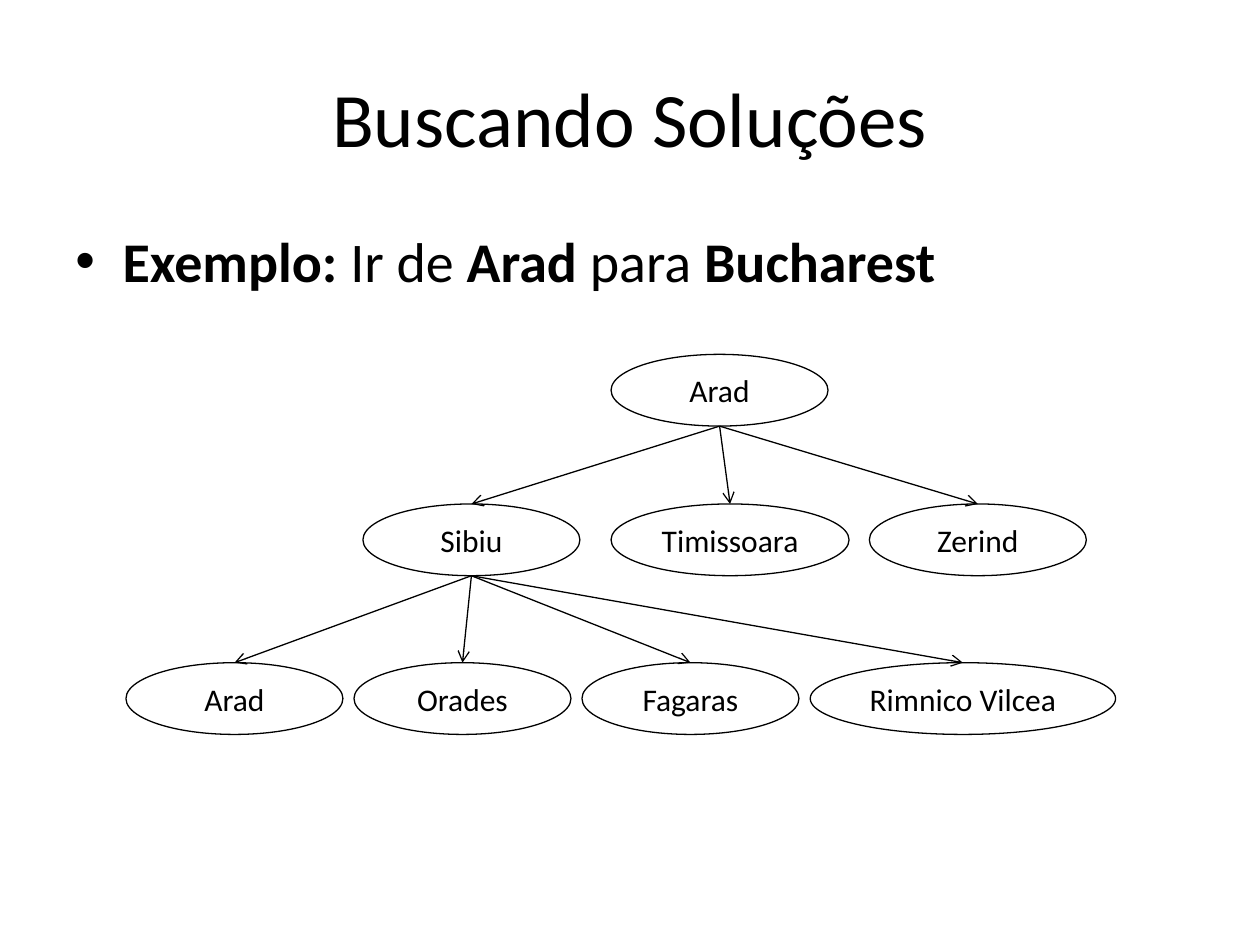
from lxml import etree
from pptx import Presentation
from pptx import util as u
from pptx.dml.color import RGBColor
from pptx.enum import shapes, text
from pptx.oxml.ns import qn

TITLE = "Buscando Soluções"
EXAMPLE = [("Exemplo: ", True), ("Ir de ", False), ("Arad", True),
           (" para ", False), ("Bucharest", True)]
LEVELS = [
    {"top": 202.5, "parent": None, "cities": [("Arad", 349.2, 124)]},
    {"top": 288, "parent": "Sibiu root", "cities": [
        ("Sibiu", 207.4, 124), ("Timissoara", 349.2, 136), ("Zerind", 496.8, 124)]},
    {"top": 378.7, "parent": "Sibiu", "cities": [
        ("Arad", 72, 124), ("Orades", 202.3, 124),
        ("Fagaras", 332.6, 124), ("Rimnico Vilcea", 463, 174.5)]},
]
LEVELS[1]["parent"] = "Arad"
NODE_HEIGHT = 41
THEME = {"font": "Calibri", "ink": RGBColor(0, 0, 0), "line": 0.75,
         "title": 44, "body": 32, "node": 18}


def write(shape, runs, size, align, anchor=text.MSO_ANCHOR.MIDDLE, wrap=True, bullet=None):
    frame = shape.text_frame
    frame.word_wrap = wrap
    frame.auto_size = text.MSO_AUTO_SIZE.NONE
    frame.vertical_anchor = anchor
    paragraph = frame.paragraphs[0]
    paragraph.alignment = align
    if bullet:
        properties = paragraph._p.get_or_add_pPr()
        properties.set("marL", str(u.Pt(27)))
        properties.set("indent", str(-u.Pt(27)))
        etree.SubElement(properties, qn("a:buFont")).set("typeface", "Arial")
        etree.SubElement(properties, qn("a:buChar")).set("char", bullet)
    for words, bold in runs:
        run = paragraph.add_run()
        run.text = words
        run.font.name = THEME["font"]
        run.font.size = u.Pt(size)
        run.font.bold = bold
        run.font.color.rgb = THEME["ink"]


def add_node(slide, city, left, top, width):
    node = slide.shapes.add_shape(shapes.MSO_SHAPE.OVAL, u.Pt(left), u.Pt(top),
                                  u.Pt(width), u.Pt(NODE_HEIGHT))
    node.shadow.inherit = False
    node.fill.background()
    node.line.color.rgb = THEME["ink"]
    node.line.width = u.Pt(THEME["line"])
    write(node, [(city, False)], THEME["node"], text.PP_ALIGN.CENTER, wrap=False)
    return node


def add_arrow(slide, parent, child):
    arrow = slide.shapes.add_connector(
        shapes.MSO_CONNECTOR.STRAIGHT,
        parent.left + parent.width // 2, parent.top + parent.height,
        child.left + child.width // 2, child.top)
    arrow.end_connect(child, 0)
    arrow.line.color.rgb = THEME["ink"]
    arrow.line.width = u.Pt(THEME["line"])
    etree.SubElement(arrow.line._get_or_add_ln(), qn("a:tailEnd")).set("type", "arrow")
    etree.SubElement(arrow._element.spPr, qn("a:effectLst"))


def main():
    presentation = Presentation()
    presentation.slide_width, presentation.slide_height = u.Pt(720), u.Pt(540)
    slide = presentation.slides.add_slide(presentation.slide_layouts[5])

    title = slide.shapes.title
    title.left, title.top, title.width, title.height = map(u.Pt, (36, 21.6, 648, 90))
    write(title, [(TITLE, False)], THEME["title"], text.PP_ALIGN.CENTER)

    example = slide.shapes.add_textbox(*map(u.Pt, (36, 126, 648, 356.4)))
    write(example, EXAMPLE, THEME["body"], text.PP_ALIGN.LEFT,
          anchor=text.MSO_ANCHOR.TOP, bullet="•")

    previous = {}
    for level in LEVELS:
        current = {}
        for city, left, width in level["cities"]:
            current[city] = add_node(slide, city, left, level["top"], width)
            if level["parent"]:
                add_arrow(slide, previous[level["parent"]], current[city])
        previous = current

    presentation.save("out.pptx")


if __name__ == "__main__":
    main()
